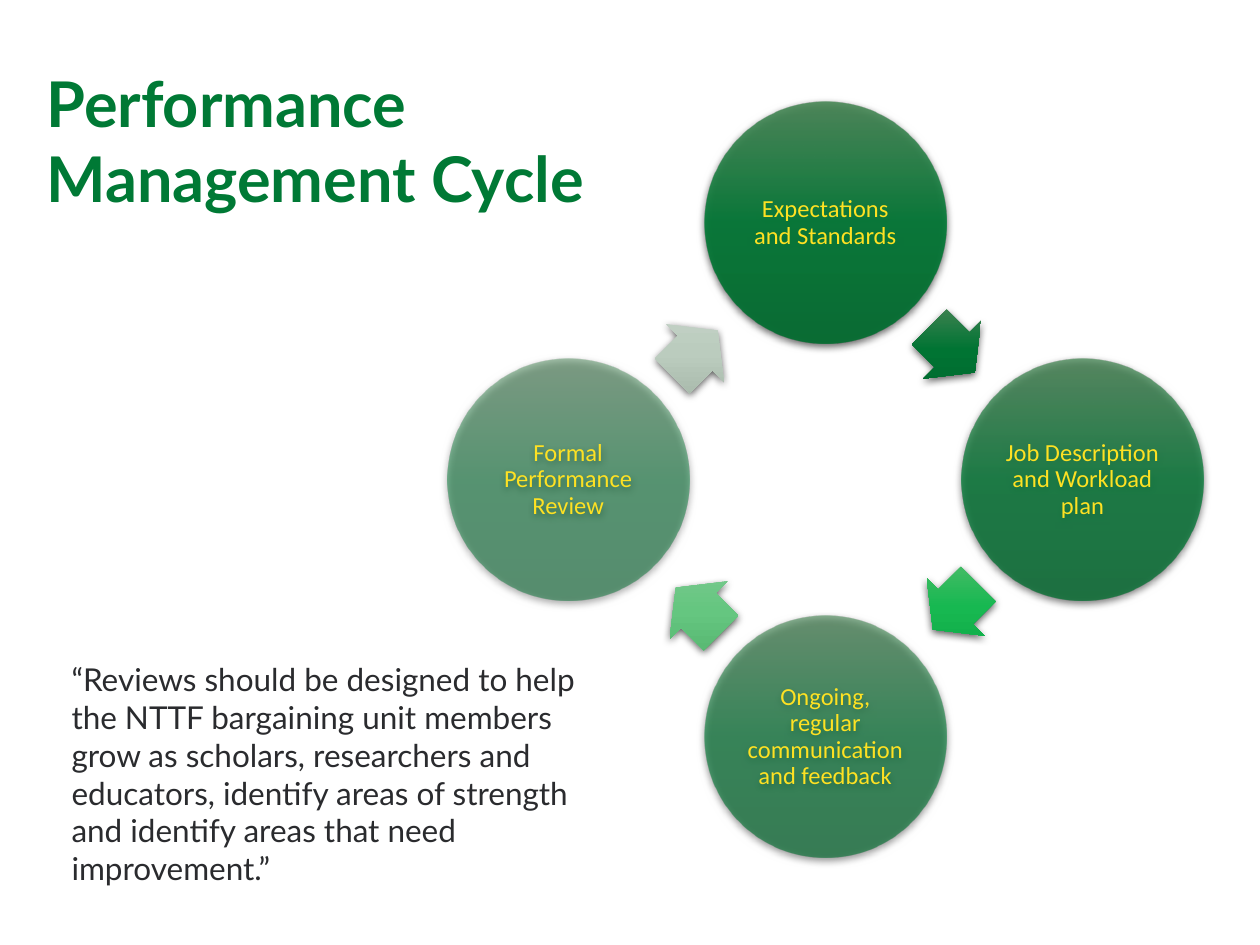
from math import cos, radians, sin

from pptx import Presentation
from pptx.dml.color import RGBColor
from pptx.enum.shapes import MSO_SHAPE as Shape
from pptx.enum.text import MSO_ANCHOR as Anchor, MSO_AUTO_SIZE as AutoSize, PP_ALIGN as Align
from pptx.oxml import parse_xml
from pptx.oxml.ns import nsdecls
from pptx.util import Pt

GREEN = RGBColor(0x00, 0x79, 0x35)
YELLOW = RGBColor(0xFE, 0xE1, 0x23)
INK = RGBColor(0x2A, 0x2B, 0x2E)
CIRCLE_STOPS = (RGBColor(0x4B, 0x88, 0x58), GREEN, RGBColor(0x00, 0x6C, 0x2F))

# Cycle geometry, in points
CENTER_X, CENTER_Y = 471.6, 274.3
ORBIT = 146.9
DIAMETER = 138.2
ARROW_WIDTH, ARROW_HEIGHT = 36.7, 46.8
ARROW_SETBACK = 1.4

# Label and opacity of each circle, then the colours of the arrow after it
STEPS = [
    ("Expectations and Standards", 90,
     (RGBColor(0x4B, 0x84, 0x57), RGBColor(0x00, 0x74, 0x33), RGBColor(0x00, 0x67, 0x2D))),
    ("Job Description and Workload plan", 77,
     (RGBColor(0x4E, 0xBC, 0x6A), RGBColor(0x17, 0xB8, 0x51), RGBColor(0x0E, 0xAA, 0x46))),
    ("Ongoing, regular communication and feedback", 63,
     (RGBColor(0x7C, 0xC9, 0x90), RGBColor(0x65, 0xC6, 0x80), RGBColor(0x55, 0xB5, 0x6F))),
    ("Formal Performance Review", 50,
     (RGBColor(0xC4, 0xD2, 0xC7), RGBColor(0xBB, 0xCC, 0xBE), RGBColor(0xA5, 0xB6, 0xA8))),
]
QUOTE = ("“Reviews should be designed to help the NTTF bargaining unit members grow as "
         "scholars, researchers and educators, identify areas of strength and identify "
         "areas that need improvement.”")


def add_text(frame, text, font, size, color, align=Align.LEFT, bold=False):
    frame.word_wrap = True
    para = frame.paragraphs[0]
    para.alignment = align
    span = para.add_run()
    span.text = text
    span.font.name, span.font.size, span.font.bold = font, Pt(size), bold
    span.font.color.rgb = color
    return para


def style_shape(shape, colors, opacity=100):
    """Give a shape a vertical three-colour gradient and a soft shadow."""
    shape.line.fill.background()
    stops = "".join(
        f'<a:gs pos="{i * 50000}"><a:srgbClr val="{color}">'
        f'<a:alpha val="{opacity * 1000}"/></a:srgbClr></a:gs>'
        for i, color in enumerate(colors))
    gradient = parse_xml(
        f'<a:gradFill {nsdecls("a")} rotWithShape="0"><a:gsLst>{stops}</a:gsLst>'
        '<a:lin ang="5400000" scaled="0"/></a:gradFill>')
    effects = parse_xml(
        f'<a:effectLst {nsdecls("a")}><a:outerShdw blurRad="{Pt(4.5)}" dist="{Pt(1.5)}" '
        'dir="5400000" algn="ctr" rotWithShape="0"><a:srgbClr val="000000">'
        '<a:alpha val="63000"/></a:srgbClr></a:outerShdw></a:effectLst>')
    line = shape.line._get_or_add_ln()
    line.addprevious(gradient)
    line.addnext(effects)


def add_centered(page, kind, x, y, width, height):
    return page.shapes.add_shape(
        kind, Pt(x - width / 2), Pt(y - height / 2), Pt(width), Pt(height))


def add_circle(page, angle, label, opacity):
    x = CENTER_X + ORBIT * sin(radians(angle))
    y = CENTER_Y - ORBIT * cos(radians(angle))
    circle = add_centered(page, Shape.OVAL, x, y, DIAMETER, DIAMETER)
    style_shape(circle, CIRCLE_STOPS, opacity)
    frame = circle.text_frame
    frame.margin_left = frame.margin_right = frame.margin_top = frame.margin_bottom = Pt(1.4)
    frame.vertical_anchor = Anchor.MIDDLE
    para = add_text(frame, label, "Calibri", 14, YELLOW, Align.CENTER)
    para.line_spacing = 0.9


def add_arrow(page, angle, colors):
    """Place an arrow midway between two circles, set back a little from its heading."""
    middle, heading = radians(angle), radians(angle)
    reach = ORBIT * cos(radians(45))
    x = CENTER_X + reach * sin(middle) - ARROW_SETBACK * cos(heading)
    y = CENTER_Y - reach * cos(middle) - ARROW_SETBACK * sin(heading)
    arrow = add_centered(page, Shape.RIGHT_ARROW, x, y, ARROW_WIDTH, ARROW_HEIGHT)
    arrow.rotation = angle
    arrow.adjustments[0], arrow.adjustments[1] = 0.6, 0.5
    style_shape(arrow, colors)


def add_title(page):
    title = page.shapes.title
    title.left, title.top, title.width, title.height = Pt(19.4), Pt(33.1), Pt(324.7), Pt(94.3)
    title.text_frame.auto_size = AutoSize.NONE
    title.text_frame.vertical_anchor = Anchor.TOP
    add_text(title.text_frame, "Performance Management Cycle", "Lato", 36, GREEN, bold=True)


def add_quote(page):
    box = page.shapes.add_textbox(Pt(33.8), Pt(373.7), Pt(330.5), Pt(116.6))
    add_text(box.text_frame, QUOTE, "Lato", 18, INK)


def main():
    deck = Presentation()
    deck.slide_width, deck.slide_height = Pt(720), Pt(540)
    page = deck.slides.add_slide(deck.slide_layouts[5])

    # Cycle, clockwise from the top
    for i, (label, opacity, arrow_colors) in enumerate(STEPS):
        add_circle(page, i * 90, label, opacity)
        add_arrow(page, i * 90 + 45, arrow_colors)

    # Title and quotation
    add_title(page)
    add_quote(page)
    deck.save("out.pptx")


if __name__ == "__main__":
    main()
